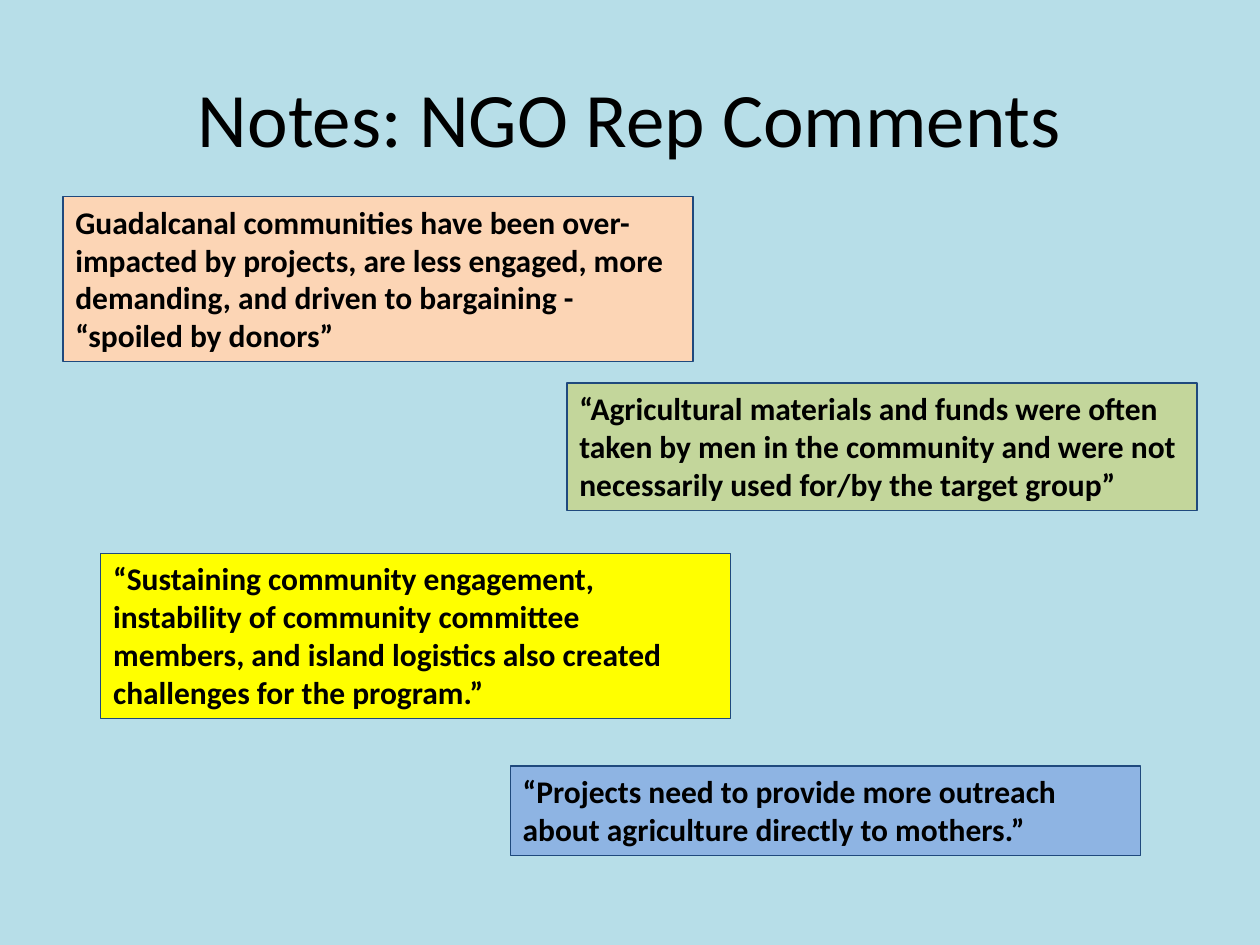
import pptx
import pptx.util
import pptx.dml.color
import pptx.enum.shapes
import pptx.enum.text
from pptx.util import Inches

COLORS = {
    "background": "B7DEE8",
    "text": "000000",
    "outline": "1F497D",
    "peach": "FCD5B5",
    "green": "C3D69B",
    "blue": "8EB4E3",
    "yellow": "FFFF00",
}
FONT = "Calibri"
COMMENT_WIDTH = 5

COMMENTS = [
    (0.5, 1.56, 1.31, "peach",
     "Guadalcanal communities have been over-impacted by projects, are less engaged, "
     "more demanding, and driven to bargaining - “spoiled by donors”"),
    (4.5, 3.04, 1.01, "green",
     "“Agricultural materials and funds were often taken by men in the community "
     "and were not necessarily used for/by the target group” "),
    (4.05, 6.08, 0.71, "blue",
     "“Projects need to provide more outreach about agriculture directly to mothers.”"),
    (0.8, 4.39, 1.31, "yellow",
     "“Sustaining community engagement, instability of community committee members, "
     "and island logistics also created challenges for the program.”"),
]


def rgb(name):
    return pptx.dml.color.RGBColor.from_string(COLORS[name])


def write_text(frame, text, size=18, bold=False, align="LEFT", anchor="TOP"):
    frame.word_wrap = True
    frame.vertical_anchor = getattr(pptx.enum.text.MSO_ANCHOR, anchor)
    paragraph = frame.paragraphs[0]
    paragraph.alignment = getattr(pptx.enum.text.PP_ALIGN, align)
    run = paragraph.add_run()
    run.text = text
    run.font.name = FONT
    run.font.size = pptx.util.Pt(size)
    run.font.bold = bold
    run.font.color.rgb = rgb("text")


def add_title(slide, text):
    title = slide.shapes.title
    title.left, title.top = Inches(0.5), Inches(0.3)
    title.width, title.height = Inches(9), Inches(1.25)
    write_text(title.text_frame, text, size=44, align="CENTER", anchor="MIDDLE")


def add_comment(slide, left, top, height, color, text):
    comment = slide.shapes.add_shape(
        pptx.enum.shapes.MSO_SHAPE.RECTANGLE,
        Inches(left), Inches(top), Inches(COMMENT_WIDTH), Inches(height))
    comment.shadow.inherit = False
    comment.fill.solid()
    comment.fill.fore_color.rgb = rgb(color)
    comment.line.color.rgb = rgb("outline")
    comment.line.width = pptx.util.Pt(0.75)
    write_text(comment.text_frame, text, bold=True)
    comment.text_frame.auto_size = pptx.enum.text.MSO_AUTO_SIZE.SHAPE_TO_FIT_TEXT


def main():
    deck = pptx.Presentation()
    deck.slide_width, deck.slide_height = Inches(10), Inches(7.5)
    slide = deck.slides.add_slide(deck.slide_layouts[5])
    slide.background.fill.solid()
    slide.background.fill.fore_color.rgb = rgb("background")
    add_title(slide, "Notes: NGO Rep Comments")
    for comment in COMMENTS:
        add_comment(slide, *comment)
    deck.save("out.pptx")


if __name__ == "__main__":
    main()
